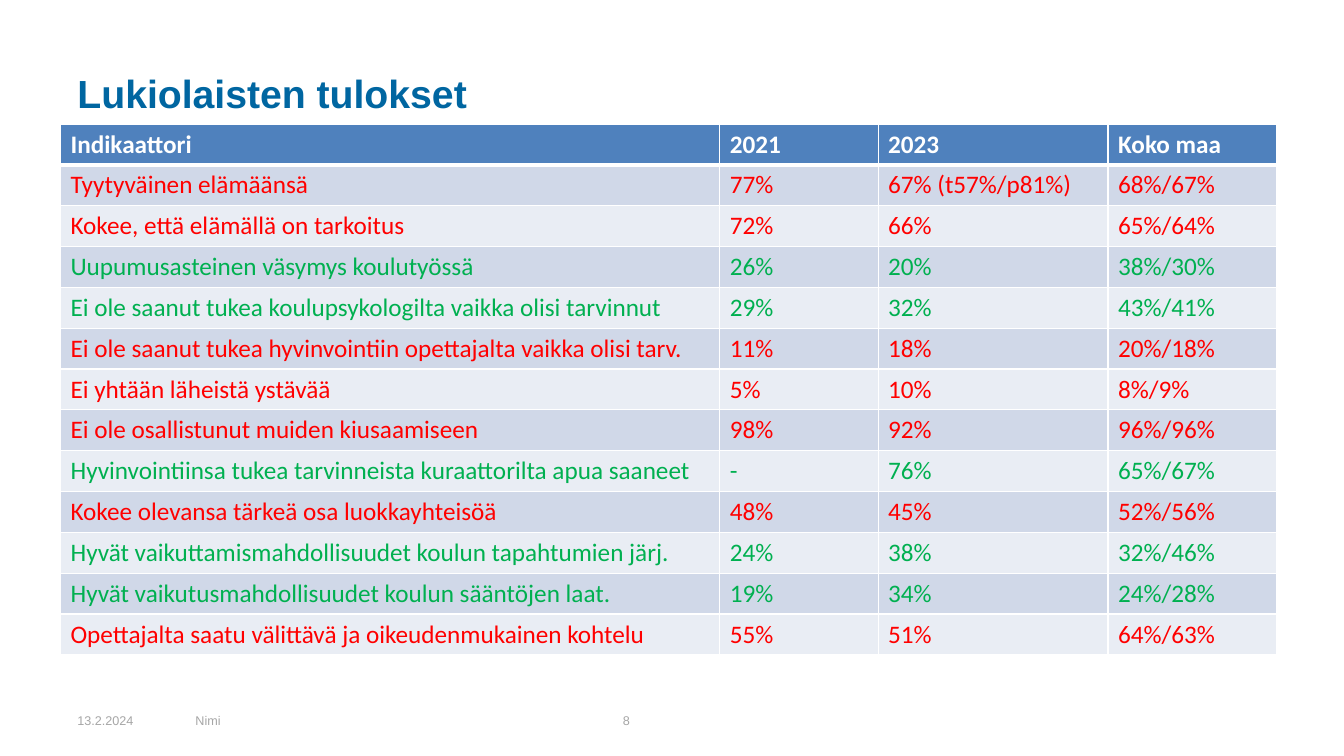
from lxml import etree
from pptx import Presentation
from pptx.dml.color import RGBColor
from pptx.enum.text import MSO_ANCHOR
from pptx.oxml.ns import qn
from pptx.util import Inches, Pt

MIDDLE = MSO_ANCHOR.MIDDLE

TITLE_BLUE = RGBColor(0x00, 0x66, 0xA1)
HEADER_BLUE = RGBColor(0x4F, 0x81, 0xBD)
BAND_DARK = RGBColor(0xD0, 0xD8, 0xE8)
BAND_LIGHT = RGBColor(0xE9, 0xED, 0xF4)
WHITE = RGBColor(0xFF, 0xFF, 0xFF)
RED = RGBColor(0xFF, 0x00, 0x00)
GREEN = RGBColor(0x00, 0xB0, 0x50)
FOOTER_GREY = RGBColor(0xA6, 0xA6, 0xA6)

COLUMN_WIDTHS = [6.54, 1.57, 2.28, 1.67]
TABLE_HEIGHT = 5.27
HEADINGS = ("Indikaattori", "2021", "2023", "Koko maa")
RESULTS = [
    (RED, "Tyytyväinen elämäänsä", "77%", "67% (t57%/p81%)", "68%/67%"),
    (RED, "Kokee, että elämällä on tarkoitus", "72%", "66%", "65%/64%"),
    (GREEN, "Uupumusasteinen väsymys koulutyössä", "26%", "20%", "38%/30%"),
    (GREEN, "Ei ole saanut tukea koulupsykologilta vaikka olisi tarvinnut",
     "29%", "32%", "43%/41%"),
    (RED, "Ei ole saanut tukea hyvinvointiin opettajalta vaikka olisi tarv.",
     "11%", "18%", "20%/18%"),
    (RED, "Ei yhtään läheistä ystävää", "5%", "10%", "8%/9%"),
    (RED, "Ei ole osallistunut muiden kiusaamiseen", "98%", "92%", "96%/96%"),
    (GREEN, "Hyvinvointiinsa tukea tarvinneista kuraattorilta apua saaneet",
     "-", "76%", "65%/67%"),
    (RED, "Kokee olevansa tärkeä osa luokkayhteisöä", "48%", "45%", "52%/56%"),
    (GREEN, "Hyvät vaikuttamismahdollisuudet koulun tapahtumien järj.",
     "24%", "38%", "32%/46%"),
    (GREEN, "Hyvät vaikutusmahdollisuudet koulun sääntöjen laat.",
     "19%", "34%", "24%/28%"),
    (RED, "Opettajalta saatu välittävä ja oikeudenmukainen kohtelu",
     "55%", "51%", "64%/63%"),
]
FOOTERS = [("13.2.2024", 0.67, 1.17), ("Nimi", 1.84, 4.22), ("8", 6.08, 3.11)]


def style_text(paragraph, font_name, size, color, bold=False):
    font = paragraph.font
    font.name = font_name
    font.size = Pt(size)
    font.bold = bold
    font.color.rgb = color


def add_text(slide, text, left, top, width, height, size, color, bold=False):
    box = slide.shapes.add_textbox(
        Inches(left), Inches(top), Inches(width), Inches(height))
    frame = box.text_frame
    frame.word_wrap = True
    frame.vertical_anchor = MIDDLE
    frame.text = text
    style_text(frame.paragraphs[0], "Arial", size, color, bold)


def add_borders(cell, top, bottom):
    properties = cell._tc.get_or_add_tcPr()
    for side, weight in (("lnL", 1), ("lnR", 1), ("lnT", top), ("lnB", bottom)):
        line = etree.SubElement(properties, qn(f"a:{side}"), w=str(Pt(weight)))
        fill = etree.SubElement(line, qn("a:solidFill"))
        etree.SubElement(fill, qn("a:srgbClr"), val=str(WHITE))


def fill_row(row, texts, text_color, band, top=1, bottom=1, bold=False):
    for cell, text in zip(row.cells, texts):
        cell.text = text
        style_text(cell.text_frame.paragraphs[0], "Calibri", 18, text_color, bold)
        add_borders(cell, top, bottom)
        cell.fill.solid()
        cell.fill.fore_color.rgb = band


def add_results_table(slide):
    row_count = len(RESULTS) + 1
    table = slide.shapes.add_table(
        row_count, len(HEADINGS), Inches(0.6), Inches(1.23),
        Inches(sum(COLUMN_WIDTHS)), Inches(TABLE_HEIGHT)).table
    for column, width in zip(table.columns, COLUMN_WIDTHS):
        column.width = Inches(width)
    for row in table.rows:
        row.height = Inches(TABLE_HEIGHT / row_count)

    fill_row(table.rows[0], HEADINGS, WHITE, HEADER_BLUE, bottom=3, bold=True)
    for index, (color, *texts) in enumerate(RESULTS, start=1):
        band = BAND_DARK if index % 2 else BAND_LIGHT
        fill_row(table.rows[index], texts, color, band, top=3 if index == 1 else 1)


def main():
    presentation = Presentation()
    presentation.slide_width = Inches(13.33)
    presentation.slide_height = Inches(7.5)
    slide = presentation.slides.add_slide(presentation.slide_layouts[6])

    add_text(slide, "Lukiolaisten tulokset", 0.67, 0.3, 12, 1.25, 28,
             TITLE_BLUE, bold=True)
    add_results_table(slide)
    for text, left, width in FOOTERS:
        add_text(slide, text, left, 6.95, width, 0.4, 9, FOOTER_GREY)

    presentation.save("out.pptx")


if __name__ == "__main__":
    main()
